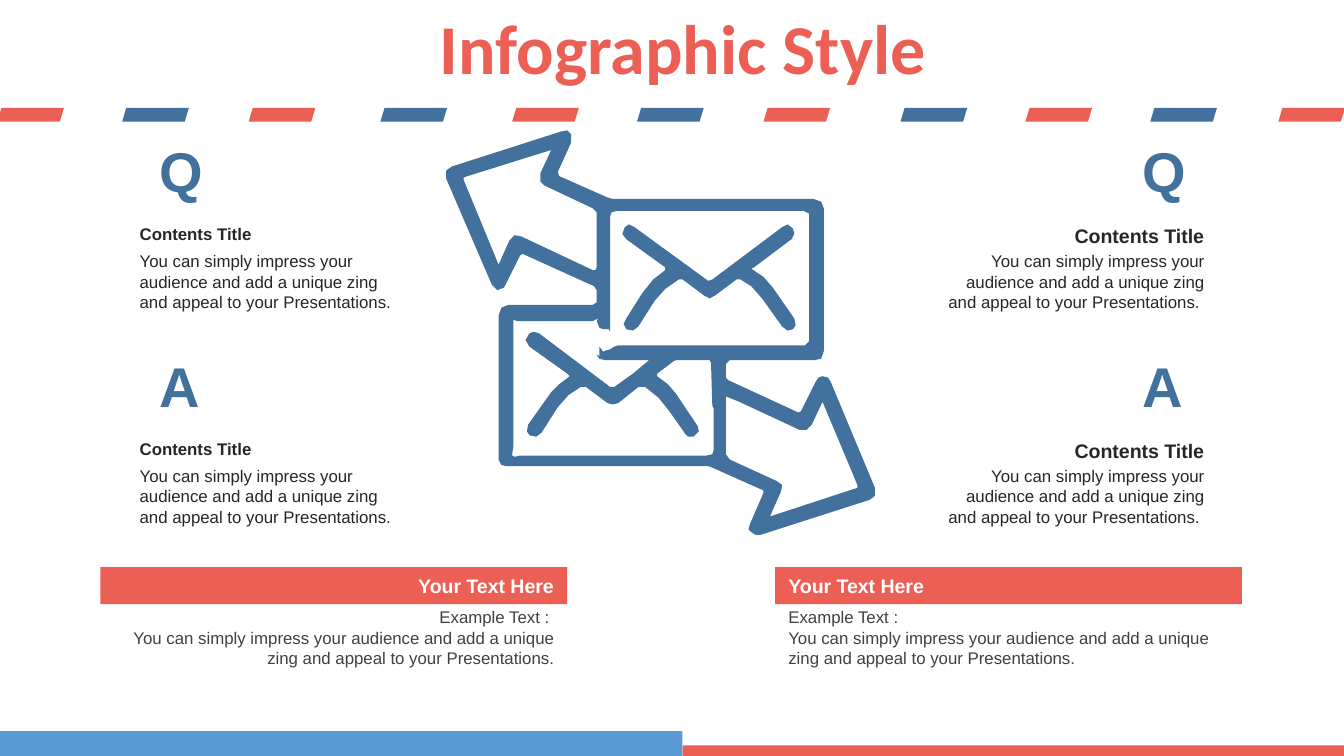
import pptx
import pptx.util
import pptx.dml.color
import pptx.enum.shapes
import pptx.enum.text

Cm, Pt = pptx.util.Cm, pptx.util.Pt
SHAPE = pptx.enum.shapes.MSO_SHAPE
ANCHOR = pptx.enum.text.MSO_ANCHOR
ALIGN = pptx.enum.text.PP_ALIGN
LEFT, CENTER, RIGHT = ALIGN.LEFT, ALIGN.CENTER, ALIGN.RIGHT

RED, NAVY, SKY = "EB5F55", "41719C", "5B9BD5"
WHITE, INK, GRAY = "FFFFFF", "262626", "404040"
PITCH = "You can simply impress your audience and add a unique zing and appeal to your Presentations."


def rgb(hex_colour):
    return pptx.dml.color.RGBColor.from_string(hex_colour)


class Sheet:
    """The current slide and its style."""
    font = "Arial"
    icon_unit = Cm(2.54) / 100  # icon points are hundredths of an inch

    def __init__(self, slide):
        self.slide = slide

    def fill_text(self, frame, lines, size, colour, bold=False, align=LEFT, font=None):
        frame.text = "\n".join(lines)
        frame.word_wrap = True
        for paragraph in frame.paragraphs:
            paragraph.alignment = align
            for run in paragraph.runs:
                run.font.name = font or self.font
                run.font.size = Pt(size)
                run.font.bold = bold
                run.font.color.rgb = rgb(colour)

    def paint(self, shape, colour):
        shape.shadow.inherit = False
        shape.fill.solid()
        shape.fill.fore_color.rgb = rgb(colour)
        shape.line.fill.background()
        return shape

    def title(self, text):
        heading = self.slide.shapes.title
        heading.left, heading.top = Cm(0.86), Cm(0.2)
        heading.width, heading.height = Cm(24.1), Cm(1.5)
        frame = heading.text_frame
        self.fill_text(frame, [text], 37.5, RED, True, CENTER, "Calibri")
        frame.auto_size = pptx.enum.text.MSO_AUTO_SIZE.NONE
        frame.vertical_anchor = ANCHOR.MIDDLE
        frame.margin_top = Cm(0.39)
        frame.paragraphs[0].line_spacing = 0.7

    def text(self, left, top, width, height, lines, size, colour, bold=False,
             align=LEFT, anchor=ANCHOR.TOP, side=0.25):
        box = self.slide.shapes.add_textbox(Cm(left), Cm(top), Cm(width), Cm(height))
        frame = box.text_frame
        self.fill_text(frame, lines, size, colour, bold, align)
        frame.vertical_anchor = anchor
        frame.margin_left = frame.margin_right = Cm(side)

    def block(self, preset, left, top, width, height, colour):
        shape = self.slide.shapes.add_shape(preset, Cm(left), Cm(top), Cm(width), Cm(height))
        return self.paint(shape, colour)

    def outline(self, contours, colour):
        builder = None
        for start, *rest in contours:
            if builder is None:
                builder = self.slide.shapes.build_freeform(*start, scale=self.icon_unit)
            else:
                builder.move_to(*start)
            builder.add_line_segments(rest, close=True)
        self.paint(builder.convert_to_shape(), colour)


# Icon: silhouette of both envelopes and arrows, followed by its openings
SILHOUETTE = [
    (651, 363), (618, 284), (616, 281), (612, 280), (609, 281), (607, 284), (596, 306), (594, 307),
    (542, 283), (540, 281), (540, 271), (543, 268), (606, 268), (611, 267), (613, 261), (613, 155),
    (611, 150), (605, 148), (456, 148), (452, 147), (416, 131), (415, 128), (425, 106), (425, 100),
    (422, 97), (417, 98), (336, 124), (332, 127), (332, 133), (366, 212), (370, 216), (375, 214),
    (387, 190), (389, 189), (442, 213), (444, 216), (444, 225), (441, 227), (378, 227), (373, 229),
    (371, 235), (371, 342), (373, 346), (377, 347), (527, 347), (530, 348), (568, 365), (568, 367),
    (558, 390), (557, 394), (559, 396), (562, 398), (566, 398), (647, 372), (651, 369)]
UPPER_ARROW = [
    (444, 199), (443, 201), (441, 201), (388, 176), (383, 175), (379, 179), (371, 197), (345, 134),
    (345, 132), (409, 112), (410, 112), (402, 129), (402, 135), (405, 138), (441, 155), (444, 158)]
LOWER_ARROW = [
    (638, 363), (574, 384), (573, 384), (581, 366), (582, 361), (578, 358), (543, 342), (540, 338),
    (540, 295), (550, 299), (595, 320), (600, 320), (604, 316), (612, 299), (638, 361)]
ENVELOPE_OPENING = [
    (526, 339), (387, 339), (383, 340), (381, 339), (382, 332), (382, 238), (385, 239), (441, 239),
    (443, 238), (445, 237), (444, 239), (446, 244), (449, 245), (453, 245), (454, 247), (454, 161),
    (455, 158), (459, 157), (598, 157), (602, 159), (602, 254), (599, 257), (460, 257), (457, 258),
    (454, 260), (450, 261), (449, 262), (446, 258), (446, 265), (444, 264), (446, 267), (450, 268),
    (483, 268), (471, 278), (457, 288), (454, 288), (401, 248), (397, 247), (394, 248), (391, 253),
    (394, 258), (422, 278), (424, 280), (416, 286), (410, 292), (393, 316), (392, 321), (394, 324),
    (399, 325), (403, 322), (415, 303), (423, 294), (432, 288), (436, 288), (452, 300), (456, 301),
    (460, 300), (475, 288), (480, 288), (490, 296), (498, 306), (510, 323), (512, 325), (516, 325),
    (520, 321), (519, 317), (503, 293), (497, 286), (489, 280), (489, 278), (501, 269), (503, 268),
    (528, 268), (529, 270), (530, 302), (531, 304), (531, 335), (530, 338)]
FLAP = [
    (559, 200), (568, 206), (575, 214), (591, 237), (592, 242), (590, 245), (586, 246), (582, 243),
    (567, 222), (559, 213), (551, 208), (548, 208), (532, 220), (528, 222), (524, 220), (508, 208),
    (505, 208), (495, 215), (487, 224), (475, 243), (471, 246), (466, 245), (464, 241), (466, 237),
    (478, 218), (486, 208), (495, 201), (495, 199), (466, 178), (463, 174), (465, 169), (468, 167),
    (472, 169), (527, 209), (530, 208), (582, 169), (586, 167), (590, 170), (591, 174), (589, 178),
    (561, 199)]

STRIPE_LEFTS = [-0.05, 2.31, 4.7, 7.19, 9.68, 12.04, 14.43, 17.02, 19.38, 21.74, 24.16]


def main():
    deck = pptx.Presentation()
    deck.slide_width, deck.slide_height = Cm(25.4), Cm(14.29)
    sheet = Sheet(deck.slides.add_slide(deck.slide_layouts[5]))
    sheet.title("Infographic Style")

    # Banners with example text
    for left, align, example in [(1.9, RIGHT, "Example Text : "), (14.65, LEFT, "Example Text :")]:
        banner = sheet.block(SHAPE.RECTANGLE, left, 10.72, 8.82, 0.7, RED)
        sheet.fill_text(banner.text_frame, ["Your Text Here"], 10.5, WHITE, True, align)
        sheet.text(left, 11.35, 8.82, 1.42, [example, PITCH], 9, GRAY, align=align)

    # Question and answer columns
    columns = [(2.77, CENTER, 2.41, LEFT, 9, PITCH), (21.34, RIGHT, 17.5, RIGHT, 10.5, PITCH + " ")]
    for letter_left, letter_align, left, align, title_size, pitch in columns:
        for row, letter in enumerate("QA"):
            top = 2.44 + row * 4.06
            sheet.text(letter_left, top, 1.22, 1.55, [letter], 30, NAVY, True,
                       letter_align, ANCHOR.MIDDLE)
            sheet.text(left, top + 2.18, 5.49, 1.42, [pitch], 9, INK, align=align, side=0.23)
            sheet.text(left, top + 1.67, 5.49, 0.7, ["Contents Title"], title_size, INK, True,
                       align, side=0.23)

    # Envelope icon
    sheet.outline([SILHOUETTE, UPPER_ARROW, ENVELOPE_OPENING, LOWER_ARROW], NAVY)
    sheet.outline([FLAP], NAVY)

    # Footer bars
    sheet.block(SHAPE.RECTANGLE, 0, 13.82, 12.9, 0.47, SKY)
    sheet.block(SHAPE.RECTANGLE, 12.9, 14.09, 12.5, 0.2, RED)

    # Airmail stripes, alternating in colour
    for index, left in enumerate(STRIPE_LEFTS):
        stripe = sheet.block(SHAPE.PARALLELOGRAM, left, 2.04, 1.26, 0.26, (RED, NAVY)[index % 2])
        stripe.adjustments[0] = 0.3

    deck.save("out.pptx")


if __name__ == "__main__":
    main()
